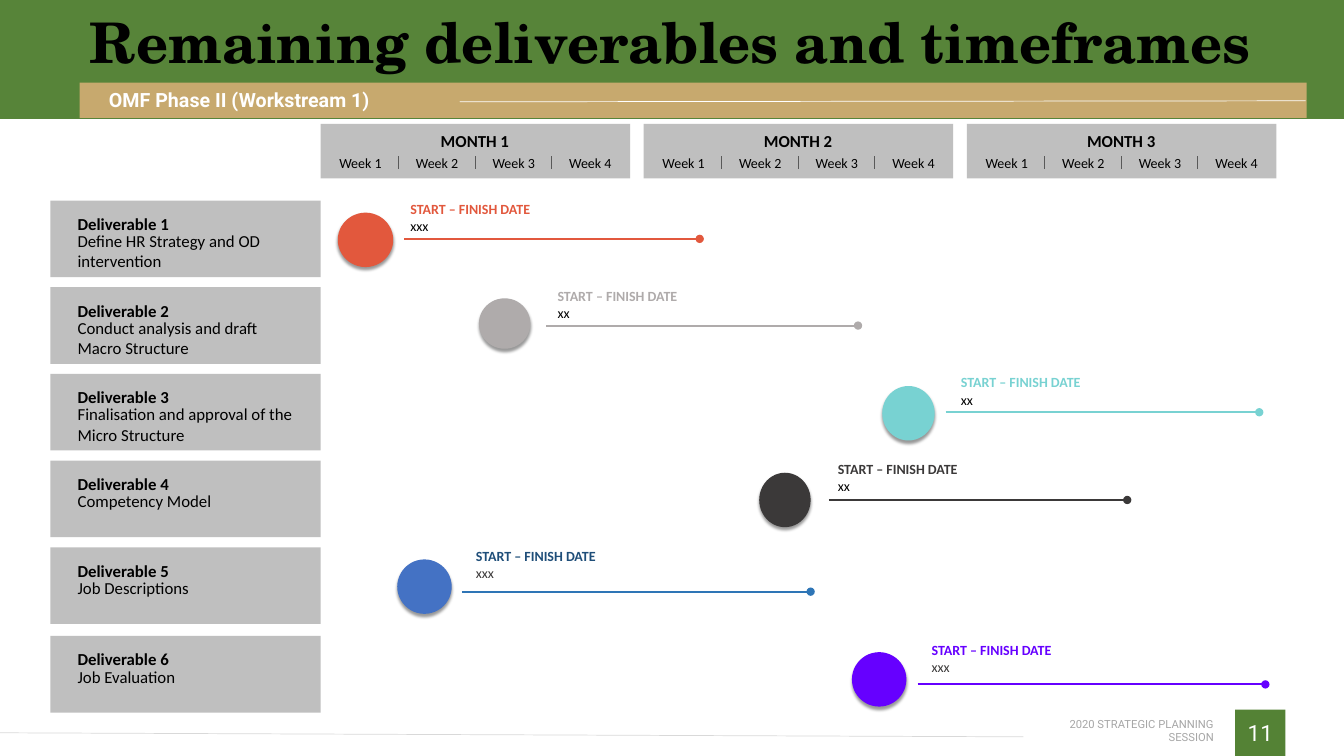
from dataclasses import dataclass

from lxml.etree import SubElement
from pptx import Presentation
from pptx.dml.color import RGBColor
from pptx.enum.shapes import MSO_CONNECTOR as Connector, MSO_SHAPE as Preset
from pptx.enum.text import MSO_ANCHOR as Anchor, MSO_AUTO_SIZE as AutoSize, PP_ALIGN as Align
from pptx.oxml.ns import qn
from pptx.shapes.autoshape import Shape
from pptx.slide import Slide
from pptx.text.text import TextFrame
from pptx.util import Inches, Pt


@dataclass(frozen=True)
class Theme:
    green: str = "548235"
    gold: str = "C7A96E"
    panel: str = "BFBFBF"
    divider: str = "595959"
    hairline: str = "D9D9D9"
    muted: str = "A6A6A6"
    black: str = "000000"
    charcoal: str = "3B3939"
    white: str = "FFFFFF"
    title_font: str = "TeX Gyre Schola"
    accent_font: str = "Roboto"
    body_font: str = "Calibri"
    title_size: int = 40
    page_size: int = 16
    subtitle_size: int = 14
    heading_size: int = 12
    detail_size: int = 10
    footer_size: int = 8


@dataclass(frozen=True)
class Box:
    left: float
    top: float
    width: float
    height: float

    def lengths(self) -> list[int]:
        return [Inches(value) for value in (self.left, self.top, self.width, self.height)]


@dataclass(frozen=True)
class TextStyle:
    size: int
    color: str = Theme.black
    bold: bool = False
    font: str = Theme.body_font
    align: Align = Align.LEFT
    anchor: Anchor = Anchor.TOP


@dataclass(frozen=True)
class Deliverable:
    description: str
    note: str
    circle: Box  # top is measured from the top of the row
    bar_start: float
    bar_end: float
    bar_drop: float
    date_left: float
    circle_color: str
    bar_color: str
    date_color: str
    note_color: str = Theme.black
    row_shift: float = 0
    date_drop: float = 0


THEME = Theme()
HEADING = TextStyle(THEME.heading_size, bold=True)
DESCRIPTION = TextStyle(THEME.heading_size)
MONTH = TextStyle(THEME.heading_size, bold=True, align=Align.CENTER)
WEEK = TextStyle(THEME.detail_size, align=Align.CENTER)

DELIVERABLES = [
    Deliverable("Define HR Strategy and OD intervention", "xxx", Box(3.35, 0.12, 0.55, 0.54),
                4.01, 6.94, 0.38, 4.07, "E2583D", "E2583D", "E2583D"),
    Deliverable("Conduct analysis and draft Macro Structure", "xx", Box(4.75, 0.11, 0.51, 0.5),
                5.42, 8.51, 0.38, 5.53, "AFABAB", "AFABAB", "AFABAB"),
    Deliverable("Finalisation and approval of the Micro Structure", "xx", Box(8.75, 0.12, 0.52, 0.54),
                9.38, 12.49, 0.38, 9.53, "78D2D2", "78D2D2", "78D2D2"),
    Deliverable("Competency Model", "xx", Box(7.53, 0.12, 0.51, 0.54),
                8.22, 11.18, 0.39, 8.31, THEME.charcoal, THEME.charcoal, THEME.charcoal),
    Deliverable("Job Descriptions", "xxx", Box(3.94, 0.12, 0.54, 0.54),
                4.58, 8.04, 0.44, 4.72, "4472C4", "2E75B6", "1F4E79", THEME.charcoal),
    Deliverable("Job Evaluation", "xxx", Box(8.45, 0.16, 0.54, 0.54),
                9.1, 12.55, 0.48, 9.24, "6600FF", "6600FF", "6600FF", THEME.charcoal, 0.02, 0.05),
]


def write_text(frame: TextFrame, text: str, style: TextStyle) -> None:
    frame.word_wrap = True
    frame.vertical_anchor = style.anchor
    paragraph = frame.paragraphs[0]
    paragraph.alignment = style.align
    run = paragraph.add_run()
    run.text = text
    formats = {"name": style.font, "size": Pt(style.size), "bold": style.bold}
    for name, value in formats.items():
        setattr(run.font, name, value)
    run.font.color.rgb = RGBColor.from_string(style.color)


def add_label(slide: Slide, box: Box, text: str, style: TextStyle) -> None:
    """Add a text box without insets that grows with its text."""
    frame = slide.shapes.add_textbox(*box.lengths()).text_frame
    for side in ("left", "top", "right", "bottom"):
        setattr(frame, f"margin_{side}", 0)
    write_text(frame, text, style)
    frame.auto_size = AutoSize.SHAPE_TO_FIT_TEXT


def add_block(slide: Slide, box: Box, color: str, preset: Preset = Preset.RECTANGLE) -> Shape:
    shape = slide.shapes.add_shape(preset, *box.lengths())
    shape.shadow.inherit = False
    shape.fill.solid()
    shape.fill.fore_color.rgb = RGBColor.from_string(color)
    shape.line.fill.background()
    return shape


def add_line(slide: Slide, start: tuple[float, float], end: tuple[float, float],
             color: str, width: float = 0.5, dot: bool = False) -> None:
    points = [Inches(value) for value in (*start, *end)]
    connector = slide.shapes.add_connector(Connector.STRAIGHT, *points)
    connector.line.color.rgb = RGBColor.from_string(color)
    connector.line.width = Pt(width)
    properties = connector.element.spPr
    if dot:
        SubElement(properties.find(qn("a:ln")), qn("a:tailEnd"), type="oval")
    SubElement(properties, qn("a:effectLst"))


def add_circle(slide: Slide, box: Box, color: str) -> None:
    circle = add_block(slide, box, color, Preset.OVAL)
    effects = circle.element.spPr.find(qn("a:effectLst"))
    shadow = SubElement(effects, qn("a:outerShdw"), blurRad=str(Pt(2)), dist=str(Pt(2)),
                        dir="5400000", algn="t", rotWithShape="0")
    shade = SubElement(shadow, qn("a:srgbClr"), val=THEME.black)
    SubElement(shade, qn("a:alpha"), val="40000")


def add_footer(slide: Slide) -> None:
    page = add_block(slide, Box(12.25, 7.04, 0.5, 0.46), THEME.green)
    write_text(page.text_frame, "11", TextStyle(THEME.page_size, THEME.white, font=THEME.accent_font,
                                                align=Align.CENTER, anchor=Anchor.MIDDLE))
    add_label(slide, Box(10.15, 7.18, 1.89, 0.13), "2020 STRATEGIC PLANNING SESSION",
              TextStyle(THEME.footer_size, THEME.muted, font=THEME.accent_font,
                        align=Align.RIGHT, anchor=Anchor.MIDDLE))
    add_line(slide, (10.15, 7.31), (0, 7.27), THEME.hairline)


def add_header(slide: Slide) -> None:
    for _ in range(2):  # two translucent layers deepen the green
        band = add_block(slide, Box(0, 0, 13.33, 1.18), THEME.green)
        SubElement(band.element.spPr.find(".//" + qn("a:srgbClr")), qn("a:alpha"), val="85000")
    ribbon = add_block(slide, Box(0.79, 0.82, 12.17, 0.35), THEME.gold, Preset.ROUNDED_RECTANGLE)
    ribbon.adjustments[0] = 0
    add_label(slide, Box(1.08, 0.87, 3.48, 0.24), "OMF Phase II (Workstream 1)",
              TextStyle(THEME.subtitle_size, THEME.white, True, THEME.accent_font, anchor=Anchor.MIDDLE))
    add_line(slide, (4.56, 1.01), (12.95, 1), THEME.white)

    title = slide.shapes.title
    title.element.getparent().append(title.element)
    title.left, title.top, title.width, title.height = Box(0.79, 0, 12.55, 0.9).lengths()
    write_text(title.text_frame, "Remaining deliverables and timeframes",
               TextStyle(THEME.title_size, bold=True, font=THEME.title_font, anchor=Anchor.MIDDLE))
    title.text_frame.auto_size = AutoSize.NONE
    title.text_frame.paragraphs[0].line_spacing = 0.9


def add_month(slide: Slide, index: int) -> None:
    left, week_pitch = 3.18 + 3.205 * index, 0.76
    add_block(slide, Box(left, 1.23, 3.07, 0.54), THEME.panel)
    add_label(slide, Box(left + 0.97, 1.3, 1.12, 0.2), f"MONTH {index + 1}", MONTH)
    for week in range(4):
        week_left = left + 0.07 + week * week_pitch
        add_label(slide, Box(week_left, 1.53, 0.65, 0.17), f"Week {week + 1}", WEEK)
        if week:
            add_line(slide, (week_left - 0.06, 1.55), (week_left - 0.06, 1.68), THEME.divider)


def add_deliverable(slide: Slide, index: int, item: Deliverable) -> None:
    top = 1.99 + 0.86 * index + item.row_shift
    add_block(slide, Box(0.5, top, 2.68, 0.76), THEME.panel)
    add_label(slide, Box(0.77, top + 0.13, 1.18, 0.2), f"Deliverable {index + 1}", HEADING)
    add_label(slide, Box(0.77, top + 0.3, 2.14, 0.2), item.description, DESCRIPTION)

    bar_top, date_top = top + item.bar_drop, top + item.date_drop
    add_line(slide, (item.bar_start, bar_top), (item.bar_end, bar_top), item.bar_color, 1.5, dot=True)
    circle = item.circle
    add_circle(slide, Box(circle.left, top + circle.top, circle.width, circle.height), item.circle_color)
    add_label(slide, Box(item.date_left, date_top, 2.14, 0.17), "START – FINISH DATE",
              TextStyle(THEME.detail_size, item.date_color, True))
    add_label(slide, Box(item.date_left, date_top + 0.17, 2.69, 0.17), item.note,
              TextStyle(THEME.detail_size, item.note_color))


def main() -> None:
    presentation = Presentation()
    presentation.slide_width, presentation.slide_height = Inches(13.33), Inches(7.5)
    slide = presentation.slides.add_slide(presentation.slide_layouts.get_by_name("Title Only"))
    add_footer(slide)
    add_header(slide)
    for index in range(3):
        add_month(slide, index)
    for index, item in enumerate(DELIVERABLES):
        add_deliverable(slide, index, item)
    presentation.save("out.pptx")


if __name__ == "__main__":
    main()
